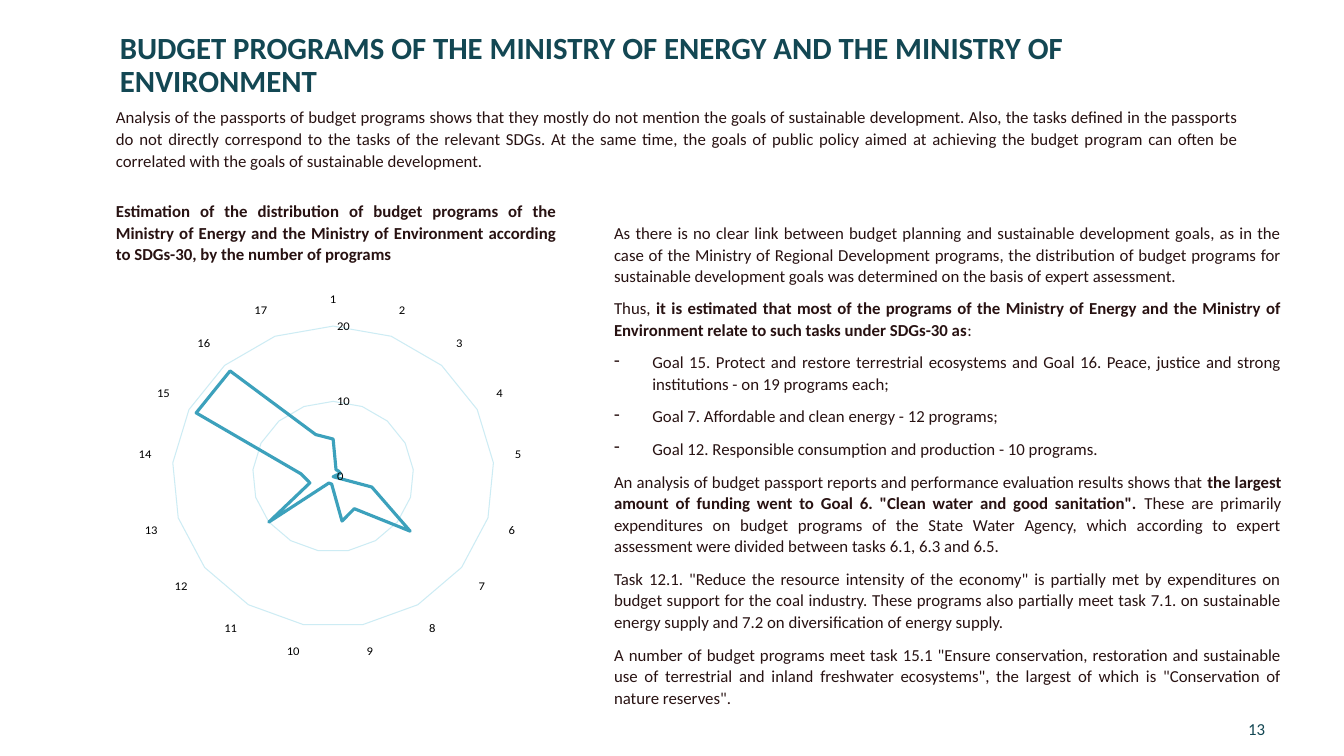
import pptx
import pptx.chart.data
import pptx.dml.color
import pptx.enum.chart
import pptx.enum.shapes
import pptx.enum.text
import pptx.oxml
import pptx.oxml.ns
import pptx.util
from pptx.util import Inches, Pt

RGB = pptx.dml.color.RGBColor
WHITE = RGB(0xFF, 0xFF, 0xFF)
DARK = RGB(0x13, 0x47, 0x53)
BODY = RGB(0x28, 0x12, 0x12)
BLACK = RGB(0, 0, 0)
GRID = RGB(0xCD, 0xEC, 0xF4)
TEAL = RGB(0x3C, 0xA1, 0xBC)
FACE = "Calibri"

TITLE = "BUDGET PROGRAMS OF THE MINISTRY OF ENERGY AND THE MINISTRY OF ENVIRONMENT"
INTRO = (
    "Analysis of the passports of budget programs shows that they mostly do not mention "
    "the goals of sustainable development. Also, the tasks defined in the passports do not "
    "directly correspond to the tasks of the relevant SDGs. At the same time, the goals of "
    "public policy aimed at achieving the budget program can often be correlated with the "
    "goals of sustainable development."
)
CAPTION = (
    "Estimation of the distribution of budget programs of the Ministry of Energy and the "
    "Ministry of Environment according to SDGs-30, by the number of programs"
)
# Each paragraph: line spacing, bulleted, then runs that alternate plain and bold
NOTES = [
    (1.06, False, [
        "As there is no clear link between budget planning and sustainable development goals, "
        "as in the case of the Ministry of Regional Development programs, the distribution of "
        "budget programs for sustainable development goals was determined on the basis of "
        "expert assessment."]),
    (1.06, False, [
        "Thus, ",
        "it is estimated that most of the programs of the Ministry of Energy and the Ministry "
        "of Environment relate to such tasks under SDGs-30 as",
        ":"]),
    (1.06, True, [
        "Goal 15. Protect and restore terrestrial ecosystems and Goal 16. Peace, justice and "
        "strong institutions - on 19 programs each;"]),
    (1.06, True, ["Goal 7. Affordable and clean energy - 12 programs;"]),
    (1.06, True, ["Goal 12. Responsible consumption and production - 10 programs."]),
    (1.07, False, [
        "An analysis of budget passport reports and performance evaluation results shows that ",
        'the largest amount of funding went to Goal 6. "Clean water and good sanitation". ',
        "These are primarily expenditures on budget programs of the State Water Agency, which "
        "according to expert assessment were divided between tasks 6.1, 6.3 and 6.5."]),
    (1.07, False, [
        'Task 12.1. "Reduce the resource intensity of the economy" is partially met by '
        "expenditures on budget support for the coal industry. These programs also partially "
        "meet task 7.1. on sustainable energy supply and 7.2 on diversification of energy "
        "supply."]),
    (1.07, False, [
        'A number of budget programs meet task 15.1 "Ensure conservation, restoration and '
        "sustainable use of terrestrial and inland freshwater ecosystems\", the largest of "
        'which is "Conservation of nature reserves".']),
]
COUNTS = [5, 1, 1, 1, 0, 5, 12, 5, 6, 1, 1, 10, 3, 4, 19, 19, 6]


def style(font, size, color, bold=False):
    font.name, font.size, font.bold = FACE, Pt(size), bold
    font.color.rgb = color


def dash(para):
    """Give the paragraph a hanging dash bullet."""
    props = para._p.get_or_add_pPr()
    props.set("marL", str(Inches(0.38)))
    props.set("indent", str(-Inches(0.38)))
    bullet = pptx.oxml.parse_xml(
        f'<a:buChar {pptx.oxml.ns.nsdecls("a")} char="-"/>')
    props.append(bullet)


def label(slide, box, text, size, bold=False):
    frame = slide.shapes.add_textbox(*map(Inches, box)).text_frame
    frame.word_wrap = True
    para = frame.paragraphs[0]
    para.text = text
    style(para.font, size, DARK, bold)
    return frame


def title(slide, box):
    frame = label(slide, box, TITLE, 22, True)
    frame.paragraphs[0].line_spacing = 0.9


def number(slide, box):
    frame = label(slide, box, "13", 12)
    frame.vertical_anchor = pptx.enum.text.MSO_ANCHOR.MIDDLE


def prose(slide, box, paras, bold=False):
    """Place a white panel of justified paragraphs."""
    panel = slide.shapes.add_shape(
        pptx.enum.shapes.MSO_SHAPE.RECTANGLE, *map(Inches, box))
    panel.shadow.inherit = False
    panel.fill.solid()
    panel.fill.fore_color.rgb = WHITE
    panel.line.fill.background()
    frame = panel.text_frame
    frame.word_wrap = True
    frame.auto_size = pptx.enum.text.MSO_AUTO_SIZE.SHAPE_TO_FIT_TEXT
    frame.vertical_anchor = pptx.enum.text.MSO_ANCHOR.TOP
    frame.margin_left = frame.margin_right = 0
    frame.margin_top = frame.margin_bottom = 0
    for i, (spacing, listed, runs) in enumerate(paras):
        para = frame.add_paragraph() if i else frame.paragraphs[0]
        if listed:
            dash(para)
        para.alignment = pptx.enum.text.PP_ALIGN.JUSTIFY
        para.line_spacing = spacing
        para.space_after = Pt(8)
        style(para.font, 12, BODY, bold)
        for j, text in enumerate(runs):
            run = para.add_run()
            run.text = text
            if len(runs) > 1:
                run.font.bold = j % 2 == 1


def inset(chart, box):
    """Fix the inner plot area, in fractions of the chart."""
    parts = "".join(f'<c:{tag}Mode val="edge"/>' for tag in "xy")
    parts += "".join(f'<c:{tag} val="{val}"/>' for tag, val in zip("xywh", box))
    layout = pptx.oxml.parse_xml(
        f'<c:layout {pptx.oxml.ns.nsdecls("c")}><c:manualLayout>'
        f'<c:layoutTarget val="inner"/>{parts}</c:manualLayout></c:layout>')
    plot = chart._chartSpace.chart.plotArea
    for old in plot.findall(pptx.oxml.ns.qn("c:layout")):
        plot.remove(old)
    plot.insert(0, layout)


def radar(slide, box):
    data = pptx.chart.data.CategoryChartData()
    data.categories = [str(i + 1) for i in range(len(COUNTS))]
    data.add_series("Series 1", COUNTS)
    chart = slide.shapes.add_chart(
        pptx.enum.chart.XL_CHART_TYPE.RADAR, *map(Inches, box), data).chart
    chart.has_legend = chart.has_title = False
    style(chart.font, 10, BLACK)
    inset(chart, (0.21, 0.08, 0.55, 0.88))

    goals, scale = chart.category_axis, chart.value_axis
    for axis in (goals, scale):
        style(axis.tick_labels.font, 9, BLACK)
        axis.tick_labels.number_format = "General"
        axis.tick_labels.number_format_is_linked = False
        axis.major_tick_mark = pptx.enum.chart.XL_TICK_MARK.NONE
        axis.minor_tick_mark = pptx.enum.chart.XL_TICK_MARK.NONE
    goals.has_major_gridlines = False
    scale.has_major_gridlines = True
    scale.minimum_scale, scale.maximum_scale, scale.major_unit = 0, 20, 10
    scale.format.line.fill.background()
    for line in (goals.format.line, scale.major_gridlines.format.line):
        line.color.rgb, line.width = GRID, Pt(0.75)

    series = chart.plots[0].series[0]
    series.smooth = False
    series.marker.style = pptx.enum.chart.XL_MARKER_STYLE.NONE
    series.format.line.color.rgb = TEAL
    series.format.line.width = Pt(2.25)


def main():
    deck = pptx.Presentation()
    deck.slide_width, deck.slide_height = Inches(13.33), Inches(7.5)
    slide = deck.slides.add_slide(deck.slide_layouts[6])
    number(slide, (12.28, 7.03, 0.8, 0.4))
    title(slide, (1.09, 0.28, 11.33, 0.56))
    prose(slide, (1.15, 1.05, 11.14, 0.64), [(1.07, False, [INTRO])])
    prose(slide, (1.15, 1.98, 4.37, 0.64), [(1.07, False, [CAPTION])], True)
    radar(slide, (0.38, 2.9, 6.03, 3.63))
    prose(slide, (6.09, 2.2, 6.62, 4.87), NOTES)
    deck.save("out.pptx")


if __name__ == "__main__":
    main()
